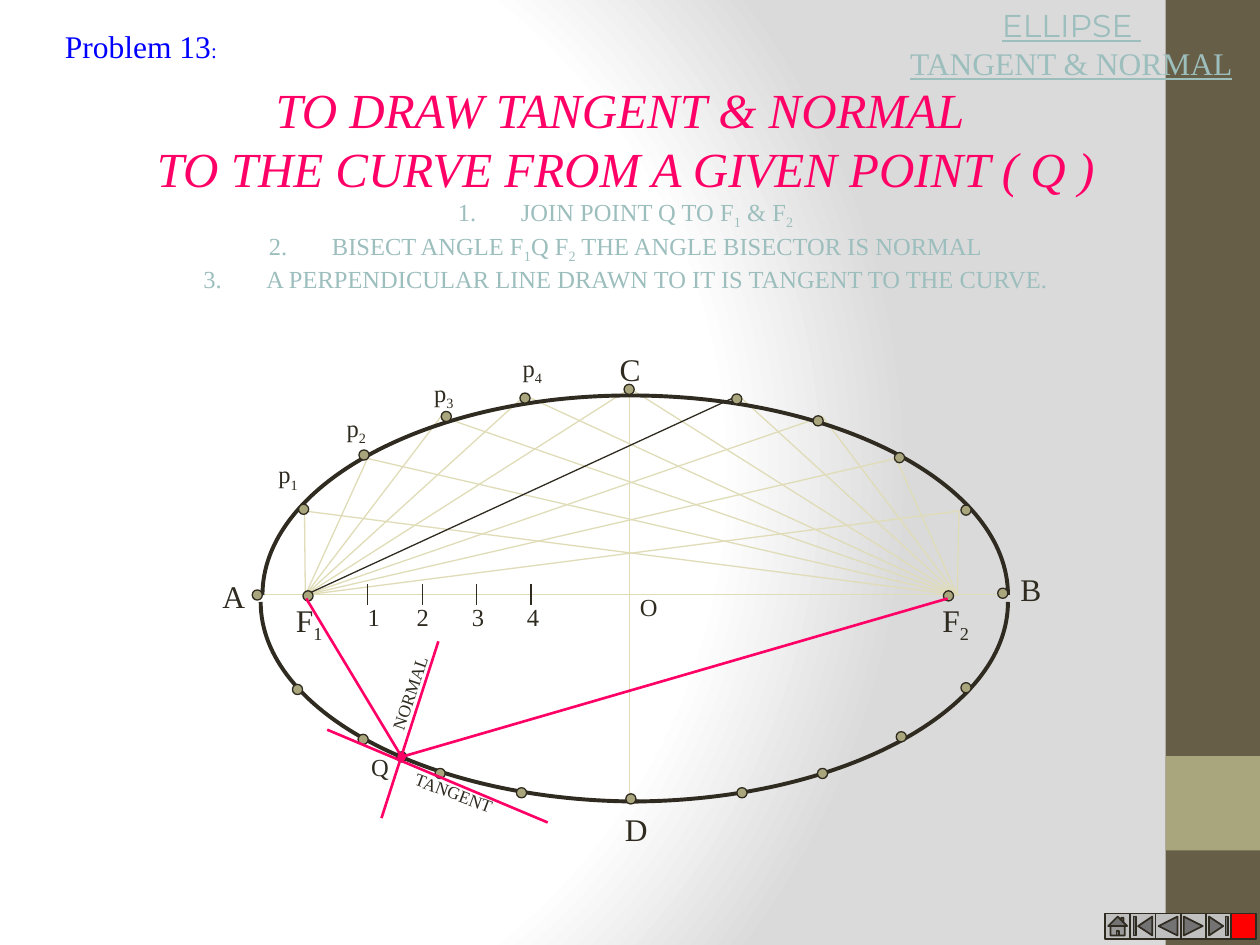
from lxml.etree import SubElement
from pptx import Presentation
from pptx.dml.color import RGBColor
from pptx.enum.shapes import MSO_CONNECTOR, MSO_SHAPE
from pptx.enum.text import MSO_ANCHOR, MSO_AUTO_SIZE, PP_ALIGN
from pptx.oxml import parse_xml
from pptx.oxml.ns import nsdecls, qn
from pptx.util import Pt

INK = RGBColor(0x2F, 0x2B, 0x20)
BROWN = RGBColor(0x67, 0x5E, 0x47)
OLIVE = RGBColor(0xA9, 0xA5, 0x7C)
CREAM = RGBColor(0xDF, 0xDC, 0xB7)
PINK = RGBColor(0xFF, 0x00, 0x66)
TEAL = RGBColor(0x9C, 0xBE, 0xBD)
BLUE = RGBColor(0x00, 0x00, 0xFF)
SILVER = RGBColor(0xC0, 0xC0, 0xC0)
RED = RGBColor(0xFF, 0x00, 0x00)
SERIF = "Times New Roman"

BACKGROUND = f"""<p:bg {nsdecls('p', 'a')}><p:bgPr><a:gradFill rotWithShape="1"><a:gsLst>
<a:gs pos="0"><a:srgbClr val="FFFFFF"/></a:gs><a:gs pos="75000"><a:srgbClr val="FFFFFF"/></a:gs>
<a:gs pos="100000"><a:srgbClr val="DADADA"/></a:gs></a:gsLst><a:path path="circle">
<a:fillToRect l="20000" t="50000" r="100000" b="50000"/></a:path></a:gradFill>
<a:effectLst/></p:bgPr></p:bg>"""


def add_text(para, text, size=14, color=INK, font=SERIF, italic=False, underline=False, align=PP_ALIGN.LEFT):
    """Add formatted spans to a paragraph; text between underscores is subscript."""
    para.alignment = align
    para.line_spacing = 1.0
    para.space_before = para.space_after = Pt(0)
    for index, piece in enumerate(text.split("_")):
        if not piece:
            continue
        span = para.add_run()
        span.text = piece
        span.font.name = font
        span.font.size = Pt(size)
        span.font.color.rgb = color
        span.font.italic = italic
        span.font.underline = underline
        if index % 2:
            span.font._element.set("baseline", "-25000")


def place(box, left, top, width, height):
    """Position a text box and give its frame the common settings."""
    box.left, box.top, box.width, box.height = Pt(left), Pt(top), Pt(width), Pt(height)
    frame = box.text_frame
    frame.word_wrap = False
    frame.auto_size = MSO_AUTO_SIZE.SHAPE_TO_FIT_TEXT
    frame.vertical_anchor = MSO_ANCHOR.TOP
    return frame


def add_label(page, text, left, top, width, height, rotation=0, **style):
    """Add a one-line text box and return its paragraph."""
    box = page.shapes.add_textbox(0, 0, 0, 0)
    para = place(box, left, top, width, height).paragraphs[0]
    box.rotation = rotation
    add_text(para, text, **style)
    return para


def add_box(page, kind, left, top, width, height, fill, outline=None, weight=0.75):
    """Add a filled preset shape without shadow."""
    shape = page.shapes.add_shape(kind, Pt(left), Pt(top), Pt(width), Pt(height))
    shape.shadow.inherit = False
    shape.fill.solid()
    shape.fill.fore_color.rgb = fill
    if outline is None:
        shape.line.fill.background()
    else:
        shape.line.color.rgb = outline
        shape.line.width = Pt(weight)


def add_line(page, center, start, end, color=CREAM, weight=0.75):
    """Draw a straight line between two points measured from the centre."""
    x, y = center
    line = page.shapes.add_connector(
        MSO_CONNECTOR.STRAIGHT, Pt(x + start[0]), Pt(y + start[1]), Pt(x + end[0]), Pt(y + end[1]))
    line.line.color.rgb = color
    line.line.width = Pt(weight)
    SubElement(line._element.spPr, qn("a:effectLst"))


def add_dot(page, center, x, y, fill=OLIVE):
    """Draw a small dot around a point measured from the centre."""
    add_box(page, MSO_SHAPE.OVAL, center[0] + x - 2.9, center[1] + y - 2.9, 5.8, 5.8, fill, INK)


def add_quarter(page, x, y, radius_x, radius_y):
    """Draw a quarter of an ellipse as one curve; signed radii choose the quadrant."""
    corners = [(Pt(x + radius_x * across), Pt(y + radius_y * down))
               for across, down in ((0, 1), (0.55, 1), (1, 0.55), (1, 0))]
    builder = page.shapes.build_freeform(*corners[0], scale=1.0)
    builder.add_line_segments(corners[1:], close=False)
    curve = builder.convert_to_shape()
    segments = list(curve._element.iter(qn("a:lnTo")))
    bend = SubElement(segments[0].getparent(), qn("a:cubicBezTo"))
    for segment in segments:
        bend.append(segment[0])
        segment.getparent().remove(segment)
    curve.shadow.inherit = False
    curve.fill.background()
    curve.line.color.rgb = INK
    curve.line.width = Pt(2.25)


def draw_sidebar(page, left, top, width, height):
    """Draw the brown band with its olive block."""
    add_box(page, MSO_SHAPE.RECTANGLE, left, top, width, height, BROWN)
    add_box(page, MSO_SHAPE.RECTANGLE, left, top + 0.8 * height, width, width, OLIVE)


def draw_ellipse(page, left, top, width, height):
    """Draw the ellipse with its axes, rays, ticks, dots and labels."""
    x, y = center = left + width / 2, top + height / 2
    half = width / 2
    foci = (-185.5, -2), (187, -2)
    add_line(page, center, (-half, -2.3), (half, -2.3))
    add_line(page, center, (-0.2, -122), (-0.2, 118))
    for side, shift in ((-1, 0), (1, 2)):
        for px, py in ((186, -50), (150, -80), (108, -104), (60, -116), (0, -120)):
            for focus in foci:
                if (px, side) == (0, 1):
                    continue
                dark = (px, side) == (60, 1) and focus == foci[0]
                add_line(page, center, (side * px + shift, py), focus, INK if dark else CREAM)
    for index in range(4):
        tick = -149.8 + 31.1 * index
        add_line(page, center, (tick, -8), (tick, 4), INK)

    add_quarter(page, x, y - 2, -210, -114)
    add_quarter(page, x + 5, y + 2, -half, 114)
    add_quarter(page, x, y + 2, half, 114)
    add_quarter(page, x, y - 2, half, -114)

    dots = [
        (-186.5, -51), (-152, -82), (-105, -104), (-60, -114.5),
        (192, -50.5), (154, -80.5), (107.5, -101.5), (61, -114),
        (192, 51), (155, 79), (110, 100), (64, 111),
        (-190, 52), (-152.5, 80.5), (-108.5, 100), (-62, 111),
        (-184, -1.5), (182, -1.5), (-213, -2), (213, -3), (-0.5, -119.5), (0.5, 114.5),
    ]
    for dot in dots:
        add_dot(page, center, *dot)

    labels = [
        ("A", -240, -16, 18), ("B", 216, -20, 18), ("C", -13, -145.5, 18), ("D", -10, 117.5, 18),
        ("F_1", -198, -2, 18), ("F_2", 171.5, -2, 18), ("O", -1.5, -7, 14),
        ("p_1", -208, -83, 14), ("p_2", -169, -109.5, 14), ("p_3", -119, -129.5, 14), ("p_4", -68.5, -144, 14),
    ]
    for text, dx, dy, size in labels:
        label_width = 30 if text.startswith("F") else 26
        add_label(page, text, x + dx, y + dy, label_width, 1.5 * size, size=size)
    numbers = add_label(page, "1\t2\t3\t4", x - 157, y - 1.5, 120, 24)
    stops = SubElement(numbers._p.get_or_add_pPr(), qn("a:tabLst"))
    for stop in (28, 59.5, 91):
        SubElement(stops, qn("a:tab"), pos=str(Pt(stop)), algn="l")
    return center


def draw_tangent(page, center):
    """Draw the focal lines, normal and tangent at point Q."""
    x, y = center
    point = -130.5, 90.5
    add_dot(page, center, *point, fill=PINK)
    add_label(page, "Q", x - 155, y + 84, 24.5, 24)
    for start, end in (((-185, 0), point), (point, (181.5, 0)),
                       ((-142, 125.5), (-109.5, 24.5)), ((-173, 75), (-47, 128))):
        add_line(page, center, start, end, PINK, 1.5)
    add_label(page, "TANGENT", x - 131, y + 102, 64, 19.5, rotation=20.7, size=10)
    add_label(page, "NORMAL", x - 155.5, y + 43, 60.5, 19.5, rotation=288.8, size=10)


def fill_headings(page):
    """Fill the title and the numbered instructions above the curve."""
    title, body = page.shapes.title, page.placeholders[1]
    for holder in (body, title):
        page.shapes._spTree.append(holder._element)

    frame = place(body, 67, 41.8, 581, 124.5)
    heading = dict(size=28, color=PINK, italic=True)
    lines = [
        ("TO DRAW TANGENT & NORMAL ", heading),
        ("TO THE CURVE FROM A GIVEN POINT ( Q )", heading),
        ("JOIN POINT Q TO F_1_ & F_2", dict(color=TEAL)),
        ("BISECT ANGLE F_1_Q F_2_ THE ANGLE BISECTOR IS NORMAL", dict(color=TEAL)),
        ("A PERPENDICULAR LINE DRAWN TO IT IS TANGENT TO THE CURVE.", dict(color=TEAL)),
    ]
    for index, (text, style) in enumerate(lines):
        para = frame.paragraphs[0] if index == 0 else frame.add_paragraph()
        add_text(para, text, align=PP_ALIGN.CENTER, **style)
        properties = para._p.get_or_add_pPr()
        properties.set("marL", str(Pt(36)))
        properties.set("indent", str(Pt(-36)))
        if style is heading:
            SubElement(properties, qn("a:buNone"))
        else:
            SubElement(properties, qn("a:buFont"), typeface=SERIF)
            SubElement(properties, qn("a:buAutoNum"), type="arabicPeriod")

    frame = place(title, 507.5, 0, 209.5, 50.5)
    style = dict(size=18, color=TEAL, underline=True, align=PP_ALIGN.CENTER)
    add_text(frame.paragraphs[0], "ELLIPSE ", font="Montserrat", **style)
    add_text(frame.add_paragraph(), "TANGENT & NORMAL", **style)

    problem = add_label(page, "Problem 13", 30, 12, 106.5, 29, size=18, color=BLUE)
    add_text(problem, ":", size=12, color=BLUE)


def draw_buttons(page, left, top, side):
    """Draw the row of navigation buttons."""
    kinds = ("HOME", "BEGINNING", "BACK_OR_PREVIOUS", "FORWARD_OR_NEXT", "END", "CUSTOM")
    for index, kind in enumerate(kinds):
        fill = RED if kind == "CUSTOM" else SILVER
        add_box(page, MSO_SHAPE["ACTION_BUTTON_" + kind], left + index * side, top, side, side, fill, INK, 1)


def main():
    """Build the slide and save it."""
    deck = Presentation()
    deck.slide_width, deck.slide_height = Pt(720), Pt(540)
    page = deck.slides.add_slide(deck.slide_layouts[1])
    page._element.cSld.insert(0, parse_xml(BACKGROUND))
    draw_sidebar(page, 666, 0, 54, 540)
    center = draw_ellipse(page, 144, 226, 432, 232)
    draw_tangent(page, center)
    fill_headings(page)
    draw_buttons(page, 631.5, 522, 14.4)
    deck.save("out.pptx")


if __name__ == "__main__":
    main()
